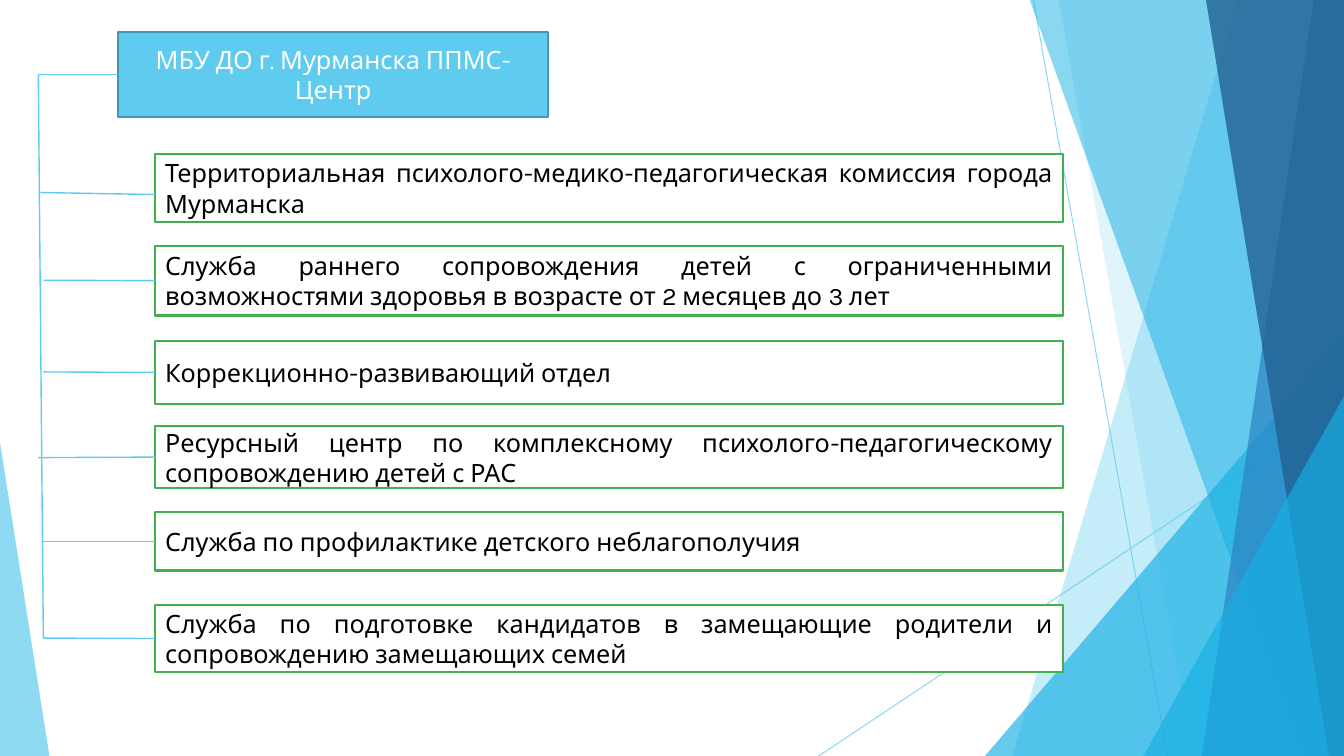
from dataclasses import dataclass

from lxml.etree import SubElement
from pptx import Presentation
from pptx.dml.color import RGBColor
from pptx.enum.shapes import MSO_CONNECTOR, MSO_SHAPE
from pptx.enum.text import MSO_ANCHOR, PP_ALIGN
from pptx.oxml.ns import qn
from pptx.util import Emu, Pt

PX = 9144  # EMU in one px, 100 px to the inch
WIDTH, HEIGHT = 1333, 750
SKY, AZURE, BLUE, NAVY = "5FCBEF", "17B0E4", "2E83C3", "226292"
HEAD_BORDER, GREEN, WHITE, BLACK = "4696B1", "42B051", "FFFFFF", "000000"
FRAME_FORMAT = {"word_wrap": True, "vertical_anchor": MSO_ANCHOR.MIDDLE}
FONT_FORMAT = {"name": "Karla", "size": Pt(18)}


@dataclass
class Band:
    """Slanted band running from top to bottom, up to the right edge."""
    top_x: int
    bottom_x: int
    color: str
    opacity: int


@dataclass
class Wedge:
    """Right-angled triangle standing on the bottom edge."""
    left: int
    top: int
    width: int
    apex: int
    color: str
    opacity: int


@dataclass
class Box:
    text: str
    left: int
    top: int
    width: int
    height: int
    fill: str = WHITE
    border: str = GREEN
    ink: str = BLACK
    align: PP_ALIGN = PP_ALIGN.JUSTIFY


@dataclass
class Branch:
    """Line from the trunk to the left side of a box."""
    start_x: int
    start_y: int
    end_y: int
    box: Box


def px(value: int) -> Emu:
    return Emu(value * PX)


def paint(color_format, color: str, opacity: int = 100) -> None:
    color_format.rgb = RGBColor.from_string(color)
    if opacity < 100:
        srgb = color_format._xFill.find(qn("a:srgbClr"))
        SubElement(srgb, qn("a:alpha"), val=str(opacity * 1000))


def fill_plain(shape, color: str, opacity: int = 100) -> None:
    shape.shadow.inherit = False
    shape.fill.solid()
    paint(shape.fill.fore_color, color, opacity)


def draw_line(shapes, x1: int, y1: int, x2: int, y2: int,
              weight: float = 1, opacity: int = 100):
    line = shapes.add_connector(MSO_CONNECTOR.STRAIGHT, px(x1), px(y1), px(x2), px(y2))
    line.line.width = Pt(weight)
    paint(line.line.color, SKY, opacity)
    SubElement(line._element.spPr, qn("a:effectLst"))
    return line


def draw_band(shapes, band: Band) -> None:
    builder = shapes.build_freeform(band.top_x, -1, scale=PX)
    builder.add_line_segments([(WIDTH, -1), (WIDTH, HEIGHT), (band.bottom_x, HEIGHT)], close=True)
    shape = builder.convert_to_shape()
    fill_plain(shape, band.color, band.opacity)
    shape.line.fill.background()


def draw_wedge(shapes, wedge: Wedge) -> None:
    shape = shapes.add_shape(MSO_SHAPE.ISOSCELES_TRIANGLE, px(wedge.left), px(wedge.top),
                             px(wedge.width), px(HEIGHT - wedge.top))
    shape.adjustments[0] = wedge.apex
    fill_plain(shape, wedge.color, wedge.opacity)
    shape.line.fill.background()


def draw_box(shapes, box: Box):
    shape = shapes.add_shape(MSO_SHAPE.RECTANGLE, px(box.left), px(box.top),
                             px(box.width), px(box.height))
    fill_plain(shape, box.fill)
    paint(shape.line.color, box.border)
    shape.line.width = Pt(1.5)
    frame = shape.text_frame
    for name, value in FRAME_FORMAT.items():
        setattr(frame, name, value)
    paragraph = frame.paragraphs[0]
    paragraph.alignment = box.align
    run = paragraph.add_run()
    run.text = box.text
    for name, value in FONT_FORMAT.items():
        setattr(run.font, name, value)
    paint(run.font.color, box.ink)
    return shape


def draw_branch(shapes, branch: Branch, target) -> None:
    box = branch.box
    line = draw_line(shapes, branch.start_x, branch.start_y, box.left, branch.end_y)
    if abs(box.top + box.height / 2 - branch.end_y) <= 1:
        line.end_connect(target, 1)


def service(text: str, top: int, height: int) -> Box:
    return Box(text, 154, top, 900, height)


BACKDROP = [
    Band(1228, 1004, SKY, 36),
    Band(1050, 1183, SKY, 20),
    Wedge(977, 333, 356, 1, AZURE, 66),
    Band(1021, 1291, AZURE, 50),
    Band(1303, 1192, BLUE, 70),
    Band(1196, 1318, NAVY, 80),
    Wedge(1134, 393, 199, 1, AZURE, 66),
    Wedge(0, 439, 49, 0, SKY, 70),
]

CENTRE = Box("МБУ ДО г. Мурманска ППМС-Центр", 117, 32, 427, 84,
             SKY, HEAD_BORDER, WHITE, PP_ALIGN.CENTER)
COMMISSION = service("Территориальная психолого-медико-педагогическая комиссия города Мурманска",
                     153, 67)
EARLY_HELP = service("Служба раннего сопровождения детей с ограниченными возможностями "
                     "здоровья в возрасте от 2 месяцев до 3 лет", 244, 69)
CORRECTION = service("Коррекционно-развивающий отдел", 338, 63)
RESOURCE = service("Ресурсный центр по комплексному психолого-педагогическому "
                   "сопровождению детей с РАС", 423, 61)
PREVENTION = service("Служба по профилактике детского неблагополучия", 508, 58)
FOSTER = service("Служба по подготовке кандидатов в замещающие родители и "
                 "сопровождению замещающих семей", 600, 67)

BRANCHES = [
    Branch(38, 74, 74, CENTRE),
    Branch(40, 191, 193, COMMISSION),
    Branch(43, 278, 278, EARLY_HELP),
    Branch(43, 369, 369, CORRECTION),
    Branch(38, 454, 454, RESOURCE),
    Branch(43, 537, 537, PREVENTION),
    Branch(43, 633, 633, FOSTER),
]


def main() -> None:
    deck = Presentation()
    deck.slide_width, deck.slide_height = px(WIDTH), px(HEIGHT)
    shapes = deck.slides.add_slide(deck.slide_layouts[6]).shapes

    # Backdrop: two thin lines under translucent facets
    draw_line(shapes, 1025, 0, 1158, HEIGHT, 0.75, 70)
    draw_line(shapes, WIDTH, 403, 812, HEIGHT, 0.75, 70)
    for facet in BACKDROP:
        if isinstance(facet, Band):
            draw_band(shapes, facet)
        else:
            draw_wedge(shapes, facet)

    # Centre and its services
    targets = [draw_box(shapes, branch.box) for branch in BRANCHES]

    # Trunk and branches
    draw_line(shapes, 38, 74, 43, 633)
    for branch, target in zip(BRANCHES, targets):
        draw_branch(shapes, branch, target)

    deck.save("out.pptx")


if __name__ == "__main__":
    main()
